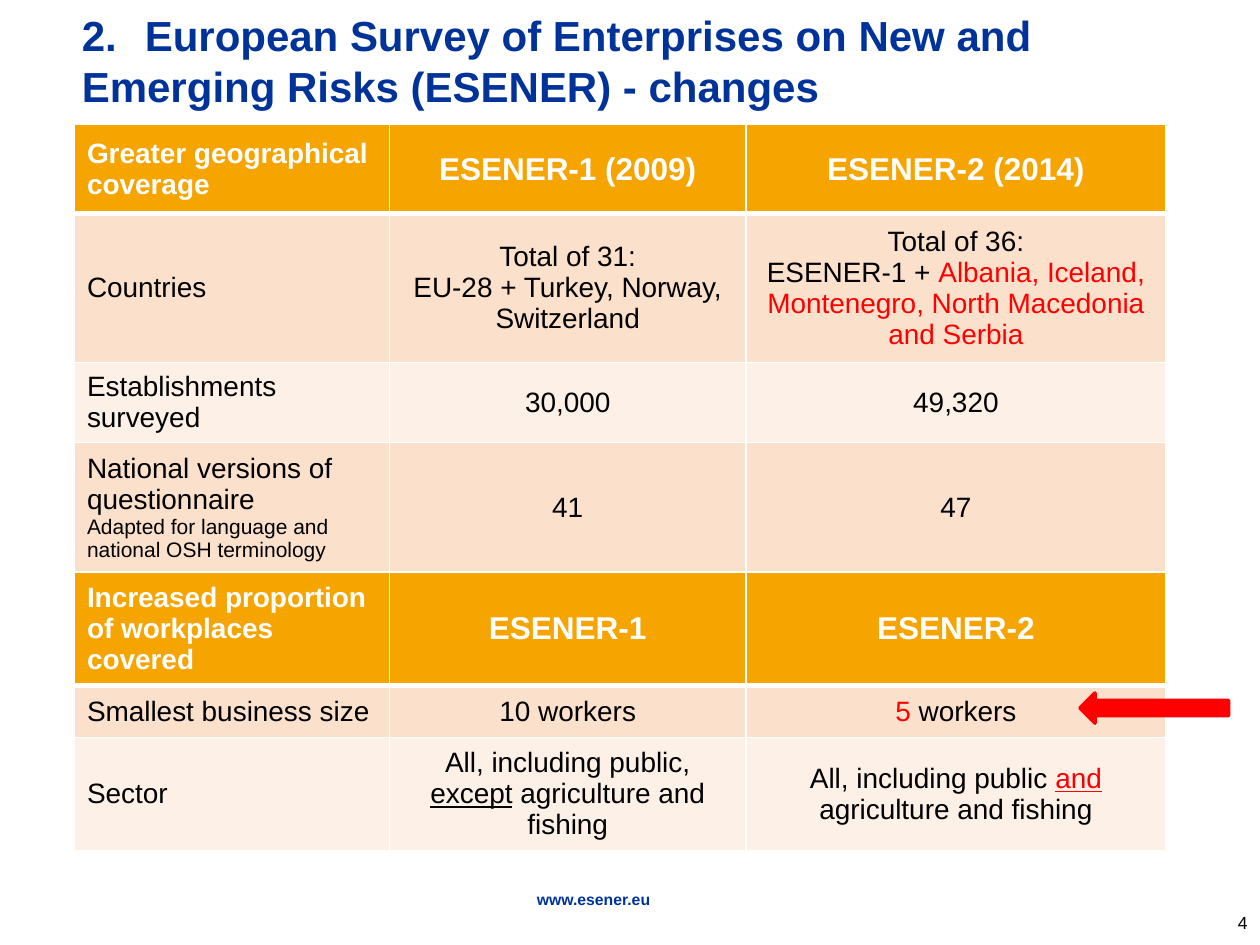
from lxml.etree import SubElement
from pptx import Presentation
from pptx.dml.color import RGBColor
from pptx.enum.shapes import MSO_SHAPE
from pptx.enum.text import MSO_ANCHOR, PP_ALIGN
from pptx.oxml.ns import qn
from pptx.util import Cm, Pt

FONT = "Arial"
BLUE = RGBColor(0x00, 0x33, 0x99)
ORANGE = RGBColor(0xF6, 0xA4, 0x00)
PEACH = RGBColor(0xFB, 0xE0, 0xCC)
CREAM = RGBColor(0xFD, 0xF0, 0xE7)
RED = RGBColor(0xFF, 0x00, 0x00)
BLACK = RGBColor(0x00, 0x00, 0x00)
WHITE = RGBColor(0xFF, 0xFF, 0xFF)

# Content: a cell is a string or a list of paragraphs; a paragraph is a
# string or a list of spans; a span is a string or (text, format)
TITLE = ("2.\tEuropean Survey of Enterprises on New and "
         "Emerging Risks (ESENER) - changes")
COVERAGE = [
    ("Greater geographical coverage", "ESENER-1 (2009)", "ESENER-2 (2014)"),
    ("Countries",
     ["Total of 31:", "EU-28 + Turkey, Norway, Switzerland"],
     ["Total of 36:",
      ["ESENER-1 + ",
       ("Albania, Iceland, Montenegro, North Macedonia and Serbia", {"color": RED})]]),
    ("Establishments surveyed", "30,000", "49,320"),
    (["National versions of questionnaire",
      [("Adapted for language and national OSH terminology", {"size": 12})]],
     "41", "47"),
]
WORKPLACES = [
    ("Increased proportion of workplaces covered", "ESENER-1", "ESENER-2"),
    ("Smallest business size", "10 workers", [[("5 ", {"color": RED}), "workers"]]),
    ("Sector",
     [["All, including public, ", ("except", {"underline": True}),
       " agriculture and fishing"]],
     [["All, including public ", ("and", {"color": RED, "underline": True}),
       " agriculture and fishing"]]),
]
COLUMN_WIDTHS = (6.35, 7.19, 8.46)
TABLES = [  # top, row heights, rows
    (2.51, (1.8, 3, 1.55, 2.62), COVERAGE),
    (11.53, (2.11, 1.05, 2.11), WORKPLACES),
]
TABLE_LEFT = 1.5


def write(frame, content, align=PP_ALIGN.LEFT, anchor=MSO_ANCHOR.MIDDLE, **style):
    """Fill a text frame or cell frame with formatted paragraphs."""
    frame.word_wrap = True
    frame.vertical_anchor = anchor
    paragraphs = [content] if isinstance(content, str) else content
    for index, spans in enumerate(paragraphs):
        para = frame.paragraphs[0] if index == 0 else frame.add_paragraph()
        para.alignment = align
        for item in [spans] if isinstance(spans, str) else spans:
            text, extra = (item, {}) if isinstance(item, str) else item
            look = {"size": 16, "color": BLACK, "bold": False, **style, **extra}
            span = para.add_run()
            span.text = text
            span.font.name = FONT
            span.font.size = Pt(look["size"])
            span.font.bold = look["bold"]
            span.font.color.rgb = look["color"]
            if look.get("underline"):
                span.font.underline = True


def add_text(page, place, content, **style):
    box = page.shapes.add_textbox(*map(Cm, place))
    write(box.text_frame, content, **style)
    return box.text_frame


def add_borders(cell, **widths):
    properties = cell._tc.get_or_add_tcPr()
    for side in "LRTB":
        line = SubElement(properties, qn(f"a:ln{side}"), w=str(Pt(widths.get(side, 1))))
        fill = SubElement(line, qn("a:solidFill"))
        SubElement(fill, qn("a:srgbClr"), val=str(WHITE))


def add_survey_table(page, top, heights, rows):
    table = page.shapes.add_table(
        len(rows), len(COLUMN_WIDTHS), Cm(TABLE_LEFT), Cm(top),
        Cm(sum(COLUMN_WIDTHS)), Cm(sum(heights))).table
    for column, width in zip(table.columns, COLUMN_WIDTHS):
        column.width = Cm(width)
    for r, (height, row) in enumerate(zip(heights, rows)):
        table.rows[r].height = Cm(height)
        for c, content in enumerate(row):
            cell = table.cell(r, c)
            cell.vertical_anchor = MSO_ANCHOR.MIDDLE
            # Thick rule under the heading row
            add_borders(cell, **{0: {"B": 3}, 1: {"T": 3}}.get(r, {}))
            cell.fill.solid()
            cell.fill.fore_color.rgb = ORANGE if r == 0 else (CREAM, PEACH)[r % 2]
            style = {"align": PP_ALIGN.CENTER if c else PP_ALIGN.LEFT}
            if r == 0:
                style.update(size=18 if c else 16, color=WHITE, bold=True)
            write(cell.text_frame, content, **style)


def main():
    deck = Presentation()
    deck.slide_width, deck.slide_height = Cm(25.4), Cm(19.05)
    page = deck.slides.add_slide(deck.slide_layouts[6])

    # Page number and footer
    add_text(page, (23.7, 18.08, 1.7, 1.02), "4", size=10, align=PP_ALIGN.RIGHT)
    footer = add_text(page, (3.86, 17.98, 16.21, 0.28), "www.esener.eu", size=9,
                      color=BLUE, bold=True, align=PP_ALIGN.CENTER,
                      anchor=MSO_ANCHOR.TOP)
    footer.margin_left = footer.margin_right = 0
    footer.margin_top = footer.margin_bottom = 0
    footer.paragraphs[0].line_spacing = 0.9

    # Title, with a tab stop after its number
    title = add_text(page, (1.4, 0.53, 22.1, 1.37), TITLE,
                     size=24, color=BLUE, bold=True)
    tabs = SubElement(title.paragraphs[0]._p.get_or_add_pPr(), qn("a:tabLst"))
    SubElement(tabs, qn("a:tab"), pos=str(Cm(1.27)), algn="l")

    # Tables
    for top, heights, rows in TABLES:
        add_survey_table(page, top, heights, rows)

    # Arrow pointing at the smallest business size
    arrow = page.shapes.add_shape(MSO_SHAPE.LEFT_ARROW, Cm(21.77), Cm(13.97),
                                  Cm(3), Cm(0.61))
    arrow.shadow.inherit = False
    arrow.fill.solid()
    arrow.fill.fore_color.rgb = RED
    arrow.line.color.rgb = RED
    arrow.line.width = Pt(2)

    deck.save("out.pptx")


if __name__ == "__main__":
    main()
